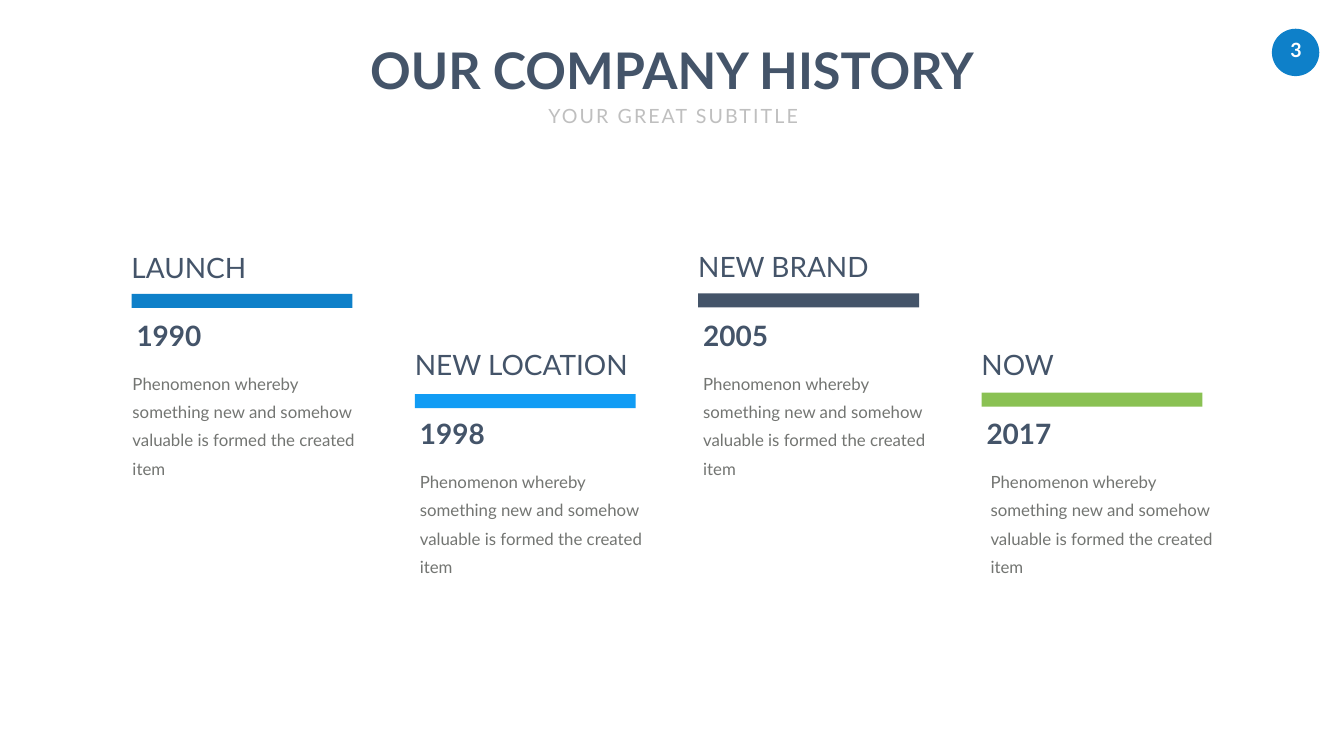
import pptx
import pptx.dml.color
import pptx.enum.shapes
import pptx.enum.text
import pptx.util

PX = 9144  # EMU per px, at 100 px to the inch
COLORS = {
    "blue": "0E80C9",
    "sky": "119CF4",
    "slate": "445469",
    "green": "8AC153",
    "silver": "BFBFBF",
    "gray": "737572",
    "white": "FFFFFF",
}
ALIGN = pptx.enum.text.PP_ALIGN
SHAPE = pptx.enum.shapes.MSO_SHAPE
BODY = "Phenomenon whereby something new and somehow valuable is formed the created item"

prs = pptx.Presentation()
prs.slide_width = 2666 * PX
prs.slide_height = 1500 * PX
s = prs.slides.add_slide(prs.slide_layouts[6])


def add_block(kind, x, y, w, h, color):
    sp = s.shapes.add_shape(kind, x * PX, y * PX, w * PX, h * PX)
    sp.shadow.inherit = False
    sp.fill.solid()
    sp.fill.fore_color.rgb = pptx.dml.color.RGBColor.from_string(COLORS[color])
    sp.line.fill.background()


def add_text(text, x, y, w, h, size, color, bold=False, align=ALIGN.LEFT,
             wrap=False, inset=(10, 5), spacing=None, tracking=0):
    """Add a one-run text box; inset is (horizontal, vertical) in px, tracking in points."""
    sp = s.shapes.add_textbox(x * PX, y * PX, w * PX, h * PX)
    tf = sp.text_frame
    tf.word_wrap = wrap
    tf.auto_size = pptx.enum.text.MSO_AUTO_SIZE.SHAPE_TO_FIT_TEXT
    tf.margin_left = tf.margin_right = inset[0] * PX
    tf.margin_top = tf.margin_bottom = inset[1] * PX
    p = tf.paragraphs[0]
    p.alignment = align
    p.line_spacing = spacing
    r = p.add_run()
    r.text = text
    r.font.name = "Lato"
    r.font.size = pptx.util.Pt(size)
    r.font.bold = bold
    r.font.color.rgb = pptx.dml.color.RGBColor.from_string(COLORS[color])
    if tracking:
        r.font._element.set("spc", str(tracking * 100))


# Page number
add_block(SHAPE.OVAL, 2523, 57, 94, 94, "blue")
add_text("3", 2527, 66, 88, 67, 28, "white", bold=True, align=ALIGN.CENTER, inset=(20, 10))

# Title and subtitle
add_text("OUR COMPANY HISTORY", 710, 72, 1246, 131, 72, "slate", bold=True, align=ALIGN.CENTER)
add_text("YOUR GREAT SUBTITLE", 1056, 185, 559, 81, 28, "silver", align=ALIGN.CENTER,
         inset=(24, 12), spacing=1.2, tracking=3)

# Milestones: heading, heading width, year, bar colour, then heading top, bar top, year top, body left
milestones = [
    ("LAUNCH", 256, "1990", "blue", 492, 583, 627, 253),
    ("NEW LOCATION", 462, "1998", "sky", 685, 782, 822, 823),
    ("NEW BRAND", 369, "2005", "slate", 490, 582, 627, 1385),
    ("NOW", 169, "2017", "green", 685, 779, 822, 1955),
]
for i, (heading, heading_w, year, color, heading_y, bar_y, year_y, body_x) in enumerate(milestones):
    x = 261 + 562 * i
    add_block(SHAPE.RECTANGLE, x, bar_y, 438, 28, color)
    add_text(heading, x - 10, heading_y, heading_w, 77, 40, "slate")
    add_text(year, x, year_y, 151, 77, 40, "slate", bold=True)
    add_text(BODY, body_x, year_y + 93, 473, 234, 24, "gray", wrap=True,
             spacing=pptx.util.Pt(40.4))

prs.save("out.pptx")
